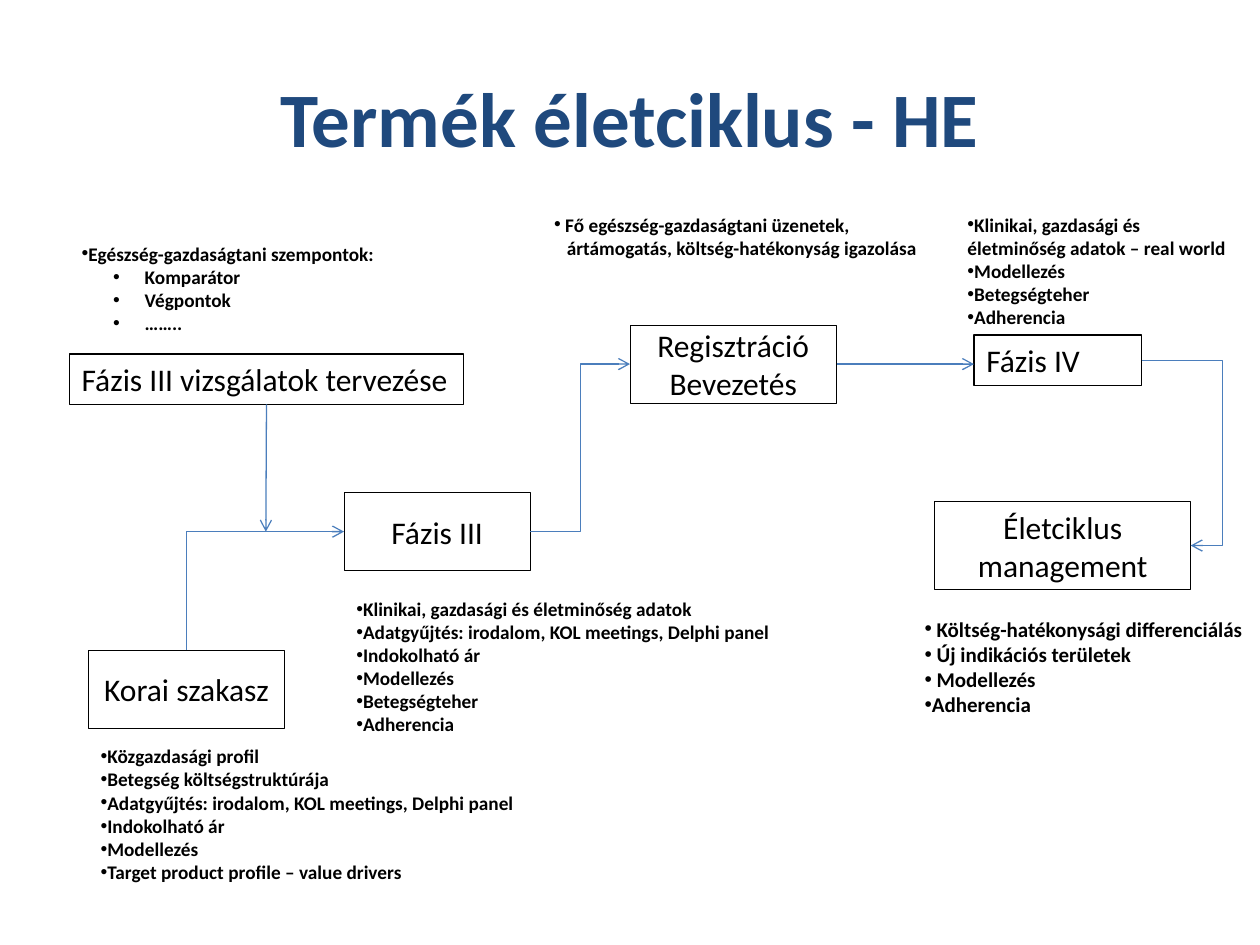
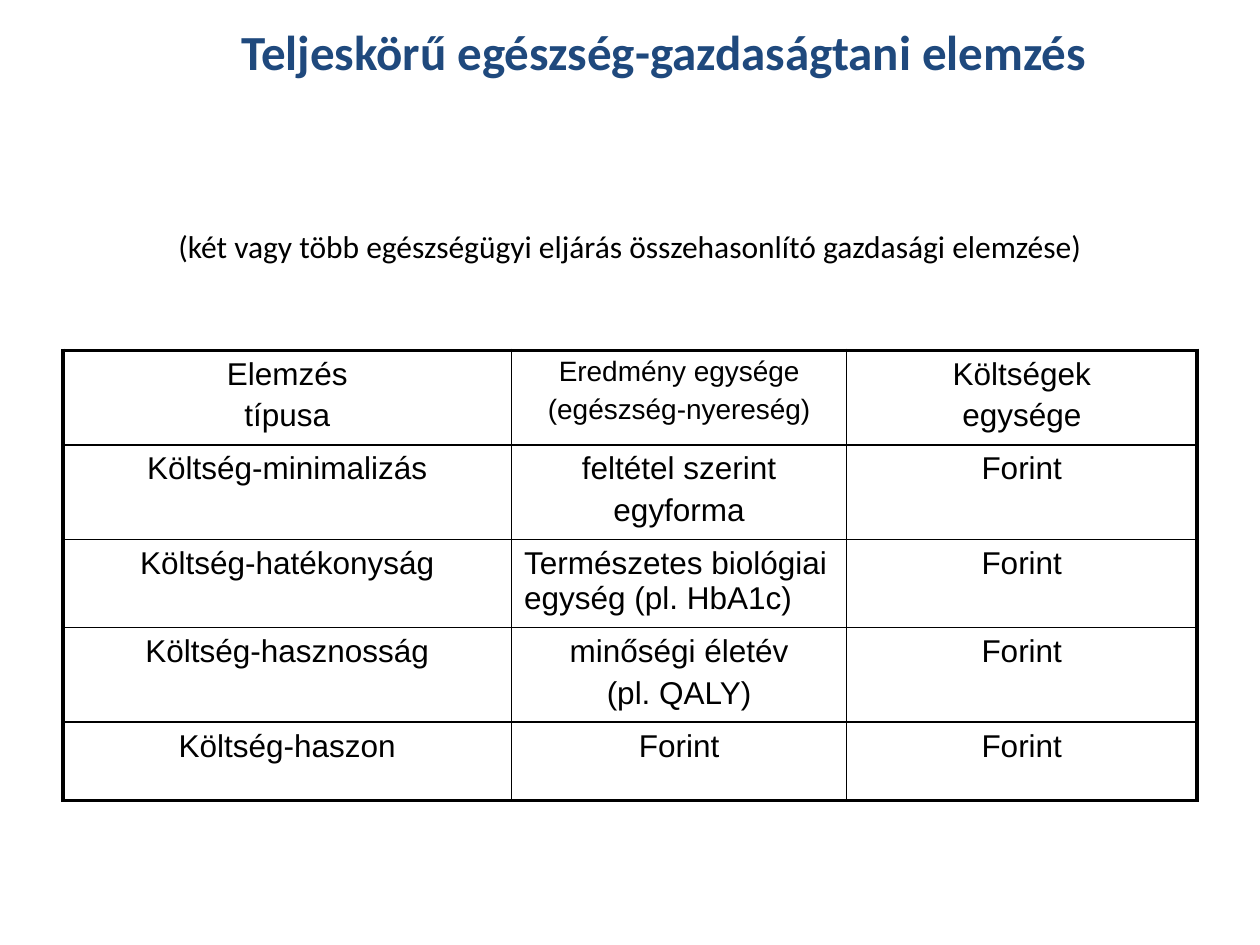
from dataclasses import dataclass
from typing import NamedTuple, Optional

import pptx
import pptx.dml.color
import pptx.enum.shapes
import pptx.enum.text
import pptx.oxml
import pptx.oxml.ns
import pptx.util

SCALE = 9144  # EMU in one px, 100 px to the inch
ALIGN = pptx.enum.text.PP_ALIGN
ANCHOR = pptx.enum.text.MSO_ANCHOR
LINK = pptx.enum.shapes.MSO_CONNECTOR
TOP, LEFT, BOTTOM, RIGHT = range(4)


# Theme
@dataclass(frozen=True)
class Theme:
    ink: str = "000000"
    paper: str = "FFFFFF"
    title: str = "1F497D"
    arrow: str = "4B7EBC"
    font: str = "Calibri"
    grid_font: str = "Arial"
    huge: int = 44
    large: int = 28
    body: int = 18
    head: int = 16
    note: int = 12
    small: int = 11
    thin: float = 0.75
    inner: float = 1
    outer: float = 2.25
    gap: float = 3.6


THEME = Theme()


class Area(NamedTuple):
    x: int
    y: int
    w: int
    h: int


class Line(NamedTuple):
    text: str
    bullet: bool = False
    left: int = 0
    hang: int = 0


class Box(NamedTuple):
    name: str
    area: Area
    lines: list
    weight: float = 0.5
    filled: bool = True  # plain boxes hold left-aligned text at the top


class Note(NamedTuple):
    area: Area
    lines: list
    size: int = THEME.small


class Arrow(NamedTuple):
    start: str
    side: int
    goal: Optional[str] = None
    end: int = LEFT
    point: tuple = (0, 0)
    kind: int = LINK.ELBOW
    bend: Optional[float] = None
    corner: bool = False


def px(value: int) -> int:
    return pptx.util.Emu(value * SCALE)


def rgb(code: str):
    return pptx.dml.color.RGBColor.from_string(code)


def dots(*texts: str, left: int = 0, hang: int = 0) -> list:
    return [Line(text, True, left, hang) for text in texts]


# Text
def write(frame, lines: list, *, size: int, color: str = THEME.ink, font: str = THEME.font,
          bold: bool = False, align=ALIGN.LEFT, gap: float = 0) -> None:
    frame.word_wrap = True
    for index, item in enumerate(lines):
        line = item if isinstance(item, Line) else Line(item)
        para = frame.add_paragraph() if index else frame.paragraphs[0]
        para.alignment = align
        para.space_before = pptx.util.Pt(gap if index else 0)
        run = para.add_run()
        run.text = line.text
        run.font.size = pptx.util.Pt(size)
        run.font.name = font
        run.font.bold = bold
        run.font.color.rgb = rgb(color)
        props = para._p.get_or_add_pPr()
        props.set("marL", str(px(line.left)))
        props.set("indent", str(-px(line.hang)))
        if line.bullet:
            add(props, '<a:buFont {ns} typeface="Arial"/>')
            add(props, '<a:buChar {ns} char="•"/>')


def add(parent, code: str) -> None:
    space = pptx.oxml.ns.nsdecls("a")
    parent.append(pptx.oxml.parse_xml(code.replace("{ns}", space)))


def label(slide, area: Area, lines: list, anchor=ANCHOR.TOP, inset: int = 5, **form) -> None:
    frame = slide.shapes.add_textbox(*map(px, area)).text_frame
    frame.vertical_anchor = anchor
    frame.margin_top = px(inset)
    write(frame, lines, **form)


def title(slide, area: Area, text: str, size: int, **place) -> None:
    label(slide, area, [text], size=size, color=THEME.title, bold=True,
          align=ALIGN.CENTER, **place)


# Boxes and arrows
def draw_box(slide, box: Box):
    shape = slide.shapes.add_shape(pptx.enum.shapes.MSO_SHAPE.RECTANGLE, *map(px, box.area))
    shape.shadow.inherit = False
    shape.line.color.rgb = rgb(THEME.ink)
    shape.line.width = pptx.util.Pt(box.weight)
    if box.filled:
        shape.fill.solid()
        shape.fill.fore_color.rgb = rgb(THEME.paper)
    else:
        shape.fill.background()
    shape.text_frame.vertical_anchor = ANCHOR.MIDDLE if box.filled else ANCHOR.TOP
    write(shape.text_frame, box.lines, size=THEME.body,
          align=ALIGN.CENTER if box.filled else ALIGN.LEFT)
    return shape


def turn(link) -> None:
    """Make an elbow with one corner that leaves upwards and goes right."""
    props = link.element.spPr
    props.find(pptx.oxml.ns.qn("a:prstGeom")).set("prst", "bentConnector2")
    frame = props.find(pptx.oxml.ns.qn("a:xfrm"))
    wide, high = link.width, link.height
    link.left += (wide - high) // 2
    link.top += (high - wide) // 2
    link.width, link.height = high, wide
    for key, value in (("rot", "5400000"), ("flipH", "1"), ("flipV", "1")):
        frame.set(key, value)


def draw_arrow(slide, arrow: Arrow, shapes: dict) -> None:
    x, y = map(px, arrow.point)
    link = slide.shapes.add_connector(arrow.kind, x, y, x, y)
    link.begin_connect(shapes[arrow.start], arrow.side)
    if arrow.goal:
        link.end_connect(shapes[arrow.goal], arrow.end)
    link.line.color.rgb = rgb(THEME.arrow)
    link.line.width = pptx.util.Pt(THEME.thin)
    add(link.line._get_or_add_ln(), '<a:tailEnd {ns} type="arrow"/>')
    add(link.element.spPr, "<a:effectLst {ns}/>")
    if arrow.corner:
        turn(link)
    if arrow.bend is not None:
        guides = link.element.spPr.find(".//" + pptx.oxml.ns.qn("a:avLst"))
        if guides is None:
            shape = link.element.spPr.find(pptx.oxml.ns.qn("a:prstGeom"))
            add(shape, "<a:avLst {ns}/>")
            guides = shape[-1]
        add(guides, f'<a:gd {{ns}} name="adj1" fmla="val {round(arrow.bend * 100000)}"/>')


# Table
def edge(cell, side: str, weight: float) -> None:
    add(cell._tc.get_or_add_tcPr(),
        f'<a:ln{side} {{ns}} w="{pptx.util.Pt(weight)}"><a:solidFill>'
        f'<a:srgbClr val="{THEME.ink}"/></a:solidFill></a:ln{side}>')


def draw_table(slide, x: int, y: int, cols: list, rows: list, data: list) -> None:
    area = Area(x, y, sum(cols), sum(rows))
    table = slide.shapes.add_table(len(rows), len(cols), *map(px, area)).table
    table.first_row = table.horz_banding = False
    for col, width in zip(table.columns, cols):
        col.width = px(width)
    for row, height in zip(table.rows, rows):
        row.height = px(height)
    for r, record in enumerate(data):
        for c, text in enumerate(record):
            cell = table.cell(r, c)
            outer = {"L": c == 0, "R": c == len(cols) - 1,
                     "T": r == 0, "B": r == len(rows) - 1}
            for side, rim in outer.items():
                edge(cell, side, THEME.outer if rim else THEME.inner)
            cell.fill.background()
            write(cell.text_frame, text.split("\n"), font=THEME.grid_font, gap=THEME.gap,
                  size=THEME.head if (r, c) == (0, 1) else THEME.body,
                  align=ALIGN.LEFT if (r, c) == (2, 1) else ALIGN.CENTER)


# Content of the life cycle slide
BOXES = [
    Box("early", Area(70, 516, 156, 62), ["Korai szakasz"]),
    Box("third", Area(273, 391, 148, 62), ["Fázis III"]),
    Box("launch", Area(500, 258, 164, 62), ["Regisztráció", "Bevezetés"], 0.25),
    Box("manage", Area(742, 398, 203, 70), ["Életciklus management"]),
    Box("plan", Area(55, 281, 313, 40), ["Fázis III vizsgálatok tervezése"], 0.75, False),
    Box("fourth", Area(773, 266, 133, 40), ["Fázis IV"], 0.75, False),
]
ARROWS = [
    Arrow("early", TOP, "third", corner=True),
    Arrow("third", RIGHT, "launch", bend=0.5),
    Arrow("plan", BOTTOM, point=(211, 422), kind=LINK.STRAIGHT),
    Arrow("launch", RIGHT, point=(773, 289), kind=LINK.STRAIGHT),
    Arrow("fourth", RIGHT, "manage", RIGHT, bend=1.64),
]
GATHER = ["Adatgyűjtés: irodalom, KOL meetings, Delphi panel", "Indokolható ár", "Modellezés"]
BURDEN = ["Betegségteher", "Adherencia"]
NOTES = [
    Note(Area(70, 586, 352, 151), dots("Közgazdasági profil", "Betegség költségstruktúrája",
                                       *GATHER, "Target product profile – value drivers")),
    Note(Area(273, 469, 376, 121),
         dots("Klinikai, gazdasági és életminőség adatok", *GATHER, *BURDEN)),
    Note(Area(430, 164, 428, 77),
         dots(" Fő egészség-gazdaságtani üzenetek,")
         + [Line("ártámogatás, költség-hatékonyság igazolása", left=10)]),
    Note(Area(724, 484, 276, 91),
         dots(" Költség-hatékonysági differenciálás", " Új indikációs területek",
              " Modellezés", "Adherencia"), THEME.note),
    Note(Area(55, 187, 297, 84),
         dots("Egészség-gazdaságtani szempontok:")
         + dots("Komparátor", "Végpontok", "……..", left=50, hang=25)),
    Note(Area(758, 164, 228, 103),
         dots("Klinikai, gazdasági és életminőség adatok – real world", "Modellezés", *BURDEN)),
]

# Content of the analysis slide
COLS = [356, 266, 278]
ROWS = [71, 71, 66, 71, 62]
DATA = [
    ("Elemzés\ntípusa", "Eredmény egysége\n(egészség-nyereség)", "Költségek\negysége"),
    ("Költség-minimalizás", "feltétel szerint\negyforma", "Forint"),
    ("Költség-hatékonyság", "Természetes biológiai egység (pl. HbA1c)", "Forint"),
    ("Költség-hasznosság", "minőségi életév\n(pl. QALY)", "Forint"),
    ("Költség-haszon", "Forint", "Forint"),
]


def cycle(slide) -> None:
    title(slide, Area(50, 30, 900, 125), "Termék életciklus - HE", THEME.huge,
          anchor=ANCHOR.MIDDLE)
    shapes = {box.name: draw_box(slide, box) for box in BOXES}
    for note in NOTES:
        label(slide, note.area, note.lines, size=note.size, bold=True)
    for arrow in ARROWS:
        draw_arrow(slide, arrow, shapes)


def study(slide) -> None:
    title(slide, Area(144, 0, 765, 125), "Teljeskörű egészség-gazdaságtani elemzés",
          THEME.large, inset=17)
    label(slide, Area(50, 175, 900, 495),
          ["(két vagy több egészségügyi eljárás összehasonlító gazdasági elemzése)"],
          size=THEME.body, align=ALIGN.CENTER)
    draw_table(slide, 50, 278, COLS, ROWS, DATA)


def main() -> None:
    deck = pptx.Presentation()
    deck.slide_width, deck.slide_height = px(1000), px(750)
    for build in (cycle, study):
        build(deck.slides.add_slide(deck.slide_layouts[6]))
    deck.save("out.pptx")


if __name__ == "__main__":
    main()
